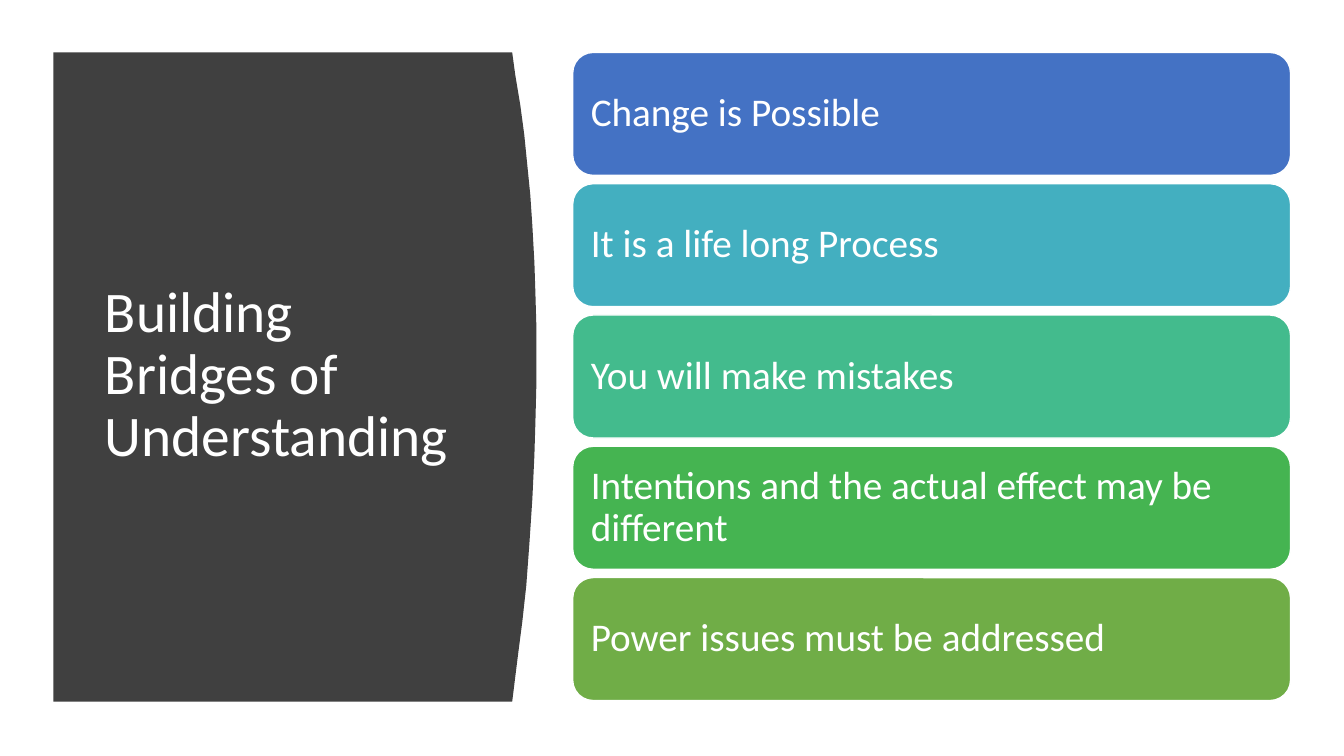
from pptx import Presentation
from pptx.dml.color import RGBColor
from pptx.enum.shapes import MSO_SHAPE as SHAPE
from pptx.enum.text import MSO_ANCHOR as ANCHOR, MSO_AUTO_SIZE as AUTO_SIZE, PP_ALIGN as ALIGN
from pptx.util import Inches, Pt

COLORS = {"panel": "404040", "white": "FFFFFF"}
MESSAGES = [
    ("Change is Possible", "4472C4"),
    ("It is a life long Process", "43AFC0"),
    ("You will make mistakes", "43BB8D"),
    ("Intentions and the actual effect may be different", "45B451"),
    ("Power issues must be addressed", "70AD47"),
]
PANEL_LEFT, PANEL_TOP, PANEL_BOTTOM = 0.53, 0.52, 6.96
PANEL_EDGE = [
    (5.08, PANEL_TOP), (5.11, 0.74), (5.16, 1.04), (5.2, 1.34), (5.23, 1.64),
    (5.26, 1.94), (5.28, 2.24), (5.3, 2.6), (5.31, 2.9), (5.32, 3.25),
    (5.32, 3.8), (5.31, 4.2), (5.3, 4.52), (5.28, 4.95), (5.25, 5.4),
    (5.22, 5.81), (5.18, 6.17), (5.14, 6.48), (5.11, 6.72), (5.08, PANEL_BOTTOM),
]
CARD_LEFT, CARD_TOP, CARD_WIDTH, CARD_HEIGHT = 5.68, 0.52, 7.12, 1.22
CARD_PITCH = 1.3025


def fill_shape(sp, color):
    sp.shadow.inherit = False
    sp.fill.solid()
    sp.fill.fore_color.rgb = RGBColor.from_string(color)


def write_text(sp, text, size, inset):
    """Put one left-aligned, vertically centred white paragraph in a shape."""
    tf = sp.text_frame
    frame_format = {
        "word_wrap": True, "auto_size": AUTO_SIZE.NONE, "vertical_anchor": ANCHOR.MIDDLE,
        "margin_left": Inches(inset), "margin_right": Inches(inset),
        "margin_top": Inches(inset), "margin_bottom": Inches(inset),
    }
    for name, value in frame_format.items():
        setattr(tf, name, value)
    p = tf.paragraphs[0]
    p.alignment = ALIGN.LEFT
    p.line_spacing = 0.9
    r = p.add_run()
    r.text = text
    r.font.name = "Calibri"
    r.font.size = Pt(size)
    r.font.color.rgb = RGBColor.from_string(COLORS["white"])


prs = Presentation()
prs.slide_width, prs.slide_height = Inches(13.33), Inches(7.5)
s = prs.slides.add_slide(prs.slide_layouts[5])

# Dark panel with a curved right edge
builder = s.shapes.build_freeform(Inches(PANEL_LEFT), Inches(PANEL_TOP))
edge = [(Inches(x), Inches(y)) for x, y in PANEL_EDGE]
builder.add_line_segments(edge + [(Inches(PANEL_LEFT), Inches(PANEL_BOTTOM))], close=True)
panel = builder.convert_to_shape()
fill_shape(panel, COLORS["panel"])
panel.line.fill.background()

# Title, in front of the panel
title = s.shapes.title
title.element.addprevious(panel.element)
title.left, title.top = Inches(0.94), Inches(1.11)
title.width, title.height = Inches(3.74), Inches(5.24)
write_text(title, "Building Bridges of Understanding", 41, 0.1)

# Message cards
for i, (message, color) in enumerate(MESSAGES):
    card = s.shapes.add_shape(
        SHAPE.ROUNDED_RECTANGLE, Inches(CARD_LEFT), Inches(CARD_TOP + i * CARD_PITCH),
        Inches(CARD_WIDTH), Inches(CARD_HEIGHT))
    fill_shape(card, color)
    card.line.color.rgb = RGBColor.from_string(COLORS["white"])
    card.line.width = Pt(1)
    write_text(card, message, 28, 0.12)

prs.save("out.pptx")
